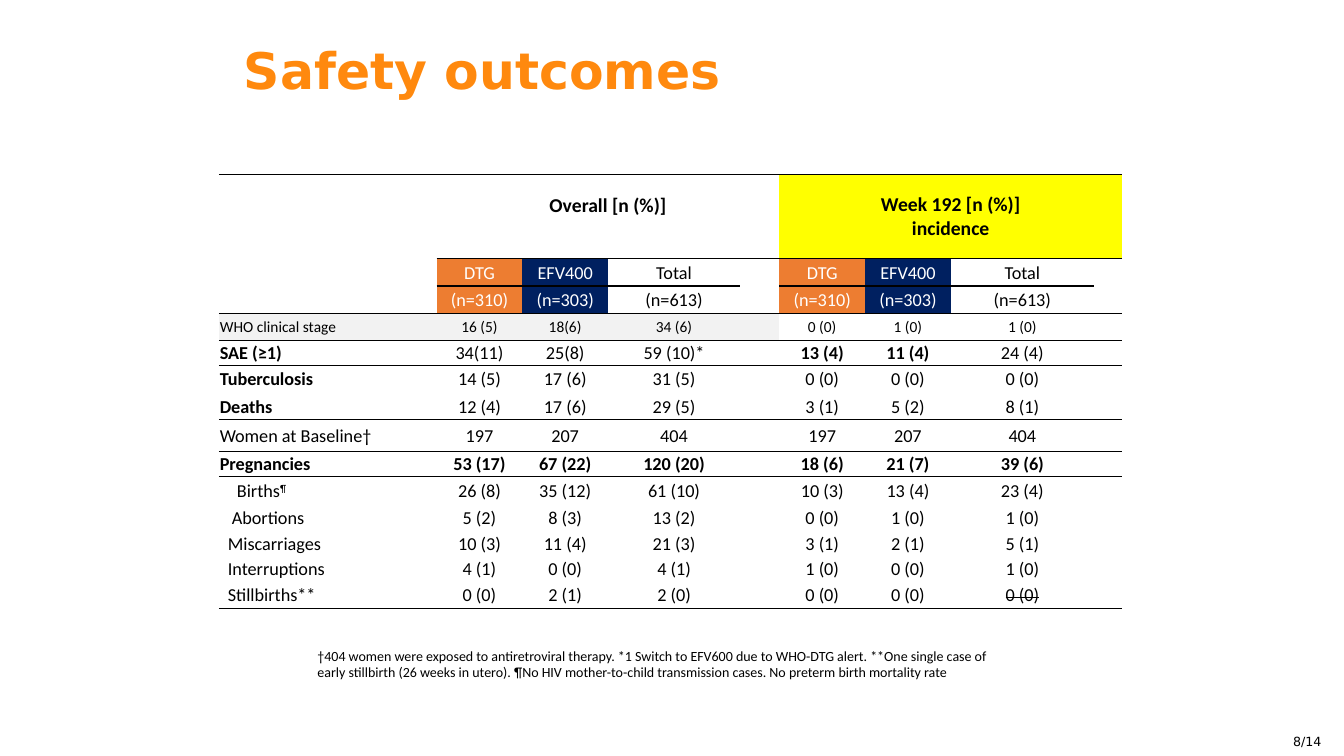
"""Build the safety outcomes slide with its table of trial results."""
from dataclasses import dataclass
from itertools import product

from lxml.etree import SubElement
from pptx import Presentation
from pptx.dml.color import RGBColor
from pptx.enum.text import MSO_ANCHOR as Anchor, PP_ALIGN as Align
from pptx.oxml.ns import qn
from pptx.slide import Slide
from pptx.table import Table, _Cell as Cell
from pptx.text.text import _Paragraph as Paragraph
from pptx.util import Inches, Pt


@dataclass(frozen=True)
class Theme:
    """Colours, fonts and type sizes of the slide."""
    black: str = "000000"
    white: str = "FFFFFF"
    title: str = "FF890E"
    dolutegravir: str = "ED7D31"
    efavirenz: str = "002060"
    highlight: str = "FFFF00"
    band: str = "F2F2F2"
    heading_font: str = "DejaVu Sans"
    body_font: str = "Calibri"
    title_size: int = 36
    group_size: int = 14
    body_size: int = 13
    small_size: int = 11
    note_size: int = 10
    number_size: int = 9
    empty_size: int = 8


THEME = Theme()


@dataclass(frozen=True)
class Style:
    """Look of one run of text."""
    size: int = THEME.body_size
    bold: bool = False
    colour: str = THEME.black
    font: str = THEME.body_font


@dataclass(frozen=True)
class TextBox:
    """One free text box."""
    text: str
    box: tuple[float, float, float, float]
    style: Style
    align: Align = Align.LEFT
    inset: bool = True
    spacing: float = 1.0


@dataclass(frozen=True)
class Outcome:
    """One body row: label, six results, and how they are set."""
    label: str
    overall: tuple[str, str, str]
    week: tuple[str, str, str]
    bold_columns: tuple[int, ...] = ()
    indent: float = 0.01
    size: int = THEME.body_size
    mark: str = ""
    struck_column: int = -1


@dataclass(frozen=True)
class Arm:
    """One heading column inside a group."""
    name: str
    count: str
    fill: str | None
    colour: str


TEXT_BOXES = (
    TextBox("Safety outcomes", (2.42, 0.46, 10.53, 0.76),
            Style(THEME.title_size, True, THEME.title, THEME.heading_font), inset=False, spacing=0.9),
    TextBox("8/14", (12.6, 7.23, 0.73, 0.25),
            Style(THEME.number_size, font=THEME.heading_font), Align.CENTER),
    TextBox("†404 women were exposed to antiretroviral therapy. *1 Switch to EFV600 due to WHO-DTG alert. "
            "**One single case of early stillbirth (26 weeks in utero). ¶No HIV mother-to-child transmission "
            "cases. No preterm birth mortality rate", (3.05, 6.37, 7.02, 0.44), Style(THEME.note_size)),
)
COLUMN_WIDTHS = (2.16, 0.85, 0.85, 1.31, 0.39, 0.85, 0.85, 1.42, 0.28)
ROW_HEIGHTS = (0.36, 0.36, 0.27, 0.27, 0.27, 0.25, 0.27, 0.27, 0.31, 0.25, 0.29, 0.25, 0.25, 0.25, 0.27)
FIRST_RULED_COLUMN = {0: 0, 2: 1, 4: 0, 5: 0, 8: 0, 9: 0, 15: 0}
GROUP_STARTS = (1, 5)
FIRST_BODY_ROW = 4
ARMS = (
    Arm("DTG", "(n=310)", THEME.dolutegravir, THEME.white),
    Arm("EFV400", "(n=303)", THEME.efavirenz, THEME.white),
    Arm("Total", "(n=613)", None, THEME.black),
)
OUTCOMES = (
    Outcome("WHO clinical stage", ("16 (5)", "18(6)", "34 (6)"), ("0 (0)", "1 (0)", "1 (0)"),
            size=THEME.small_size),
    Outcome("SAE (≥1)", ("34(11)", "25(8)", "59 (10)*"), ("13 (4)", "11 (4)", "24 (4)"), (0, 5, 6)),
    Outcome("Tuberculosis", ("14 (5)", "17 (6)", "31 (5)"), ("0 (0)", "0 (0)", "0 (0)"), (0,)),
    Outcome("Deaths", ("12 (4)", "17 (6)", "29 (5)"), ("3 (1)", "5 (2)", "8 (1)"), (0,)),
    Outcome("Women at Baseline†", ("197", "207", "404"), ("197", "207", "404")),
    Outcome("Pregnancies", ("53 (17)", "67 (22)", "120 (20)"), ("18 (6)", "21 (7)", "39 (6)"),
            tuple(range(9))),
    Outcome("Births", ("26 (8)", "35 (12)", "61 (10)"), ("10 (3)", "13 (4)", "23 (4)"),
            indent=0.18, mark="¶"),
    Outcome("Abortions", ("5 (2)", "8 (3)", "13 (2)"), ("0 (0)", "1 (0)", "1 (0)"), indent=0.13),
    Outcome("Miscarriages", ("10 (3)", "11 (4)", "21 (3)"), ("3 (1)", "2 (1)", "5 (1)"), indent=0.09),
    Outcome("Interruptions", ("4 (1)", "0 (0)", "4 (1)"), ("1 (0)", "0 (0)", "1 (0)"), indent=0.09),
    Outcome("Stillbirths**", ("0 (0)", "2 (1)", "2 (0)"), ("0 (0)", "0 (0)", "0 (0)"),
            indent=0.09, struck_column=7),
)


def add_run(paragraph: Paragraph, text: str, style: Style, **attributes: str) -> None:
    """Add a styled run with any further run attributes."""
    run = paragraph.add_run()
    run.text = text
    run.font.size = Pt(style.size)
    run.font.bold = style.bold
    run.font.name = style.font
    run.font.color.rgb = RGBColor.from_string(style.colour)
    for name, value in attributes.items():
        run.font._element.set(name, value)


def add_text_box(slide: Slide, item: TextBox) -> None:
    """Draw one text box."""
    frame = slide.shapes.add_textbox(*map(Inches, item.box)).text_frame
    frame.word_wrap = True
    if not item.inset:
        frame.margin_left = frame.margin_top = frame.margin_right = frame.margin_bottom = 0
    paragraph = frame.paragraphs[0]
    paragraph.alignment = item.align
    paragraph.line_spacing = item.spacing
    add_run(paragraph, item.text, item.style)


def write(cell: Cell, text: str, style: Style, align: Align = Align.CENTER, **attributes: str) -> None:
    """Write one line into an empty cell."""
    paragraph = cell.text_frame.paragraphs[0]
    paragraph.alignment = align
    add_run(paragraph, text, style, **attributes)


def paint(cell: Cell, colour: str) -> None:
    """Fill a cell with one colour."""
    cell.fill.solid()
    cell.fill.fore_color.rgb = RGBColor.from_string(colour)


def add_border(cell: Cell, side: str) -> None:
    """Rule one side of a cell."""
    line = SubElement(cell._tc.get_or_add_tcPr(), qn(f"a:{side}"), w=str(Pt(1)))
    SubElement(SubElement(line, qn("a:solidFill")), qn("a:srgbClr"), val=THEME.black)


def prepare_cells(table: Table) -> None:
    """Merge the heading cells, then set margins, rules and clear fills."""
    for start in GROUP_STARTS:
        table.cell(0, start).merge(table.cell(1, start + 3))
    for column in (0, 4, 8):
        table.cell(2, column).merge(table.cell(3, column))
    for row, column in product(range(len(ROW_HEIGHTS)), range(len(COLUMN_WIDTHS))):
        cell = table.cell(row, column)
        cell.margin_left = cell.margin_top = cell.margin_right = Inches(0.01)
        cell.margin_bottom = 0
        cell.vertical_anchor = Anchor.MIDDLE
        height = cell.span_height if cell.is_merge_origin else 1
        for side, boundary in (("lnT", row), ("lnB", row + height)):
            if column >= FIRST_RULED_COLUMN.get(boundary, len(COLUMN_WIDTHS)):
                add_border(cell, side)
        cell.fill.background()


def fill_headings(table: Table) -> None:
    """Write the two groups and their arms."""
    group_style = Style(THEME.group_size, True)
    overall, week = (table.cell(0, start) for start in GROUP_STARTS)
    write(overall, "Overall [n (%)]", group_style)
    overall.margin_bottom = Inches(0.23)
    write(week, "Week 192 [n (%)]", group_style)
    second_line = week.text_frame.add_paragraph()
    second_line.alignment = Align.CENTER
    add_run(second_line, "incidence", group_style)
    paint(week, THEME.highlight)
    for start, (offset, arm) in product(GROUP_STARTS, enumerate(ARMS)):
        for row, text in ((2, arm.name), (3, arm.count)):
            cell = table.cell(row, start + offset)
            write(cell, text, Style(colour=arm.colour))
            if arm.fill:
                paint(cell, arm.fill)


def fill_outcome(table: Table, row: int, outcome: Outcome) -> None:
    """Write one outcome row."""
    label = table.cell(row, 0)
    label.margin_left = Inches(outcome.indent)
    label_style = Style(outcome.size, 0 in outcome.bold_columns)
    write(label, outcome.label, label_style, Align.LEFT)
    if outcome.mark:
        add_run(label.text_frame.paragraphs[0], outcome.mark, label_style, baseline="30000")
    for start, results in zip(GROUP_STARTS, (outcome.overall, outcome.week)):
        for column, result in enumerate(results, start):
            attributes = {"strike": "sngStrike"} if column == outcome.struck_column else {}
            write(table.cell(row, column), result,
                  Style(outcome.size, column in outcome.bold_columns), **attributes)


def add_outcome_table(slide: Slide) -> None:
    """Draw the whole table."""
    frame = slide.shapes.add_table(len(ROW_HEIGHTS), len(COLUMN_WIDTHS), Inches(2.17), Inches(1.73),
                                   Inches(sum(COLUMN_WIDTHS)), Inches(sum(ROW_HEIGHTS)))
    table = frame.table
    table.first_row = table.horz_banding = False
    table._tbl.tblPr.find(qn("a:tableStyleId")).text = "{2D5ABB26-0587-4C30-8999-92F81FD0307C}"
    for column, width in zip(table.columns, COLUMN_WIDTHS):
        column.width = Inches(width)
    for row, height in zip(table.rows, ROW_HEIGHTS):
        row.height = Inches(height)
    prepare_cells(table)
    fill_headings(table)
    for row, outcome in enumerate(OUTCOMES, FIRST_BODY_ROW):
        fill_outcome(table, row, outcome)
    for column in range(5):
        paint(table.cell(FIRST_BODY_ROW, column), THEME.band)
    for cell in table.iter_cells():
        if not cell.text:
            paragraph = cell.text_frame.paragraphs[0]
            SubElement(paragraph._p, qn("a:endParaRPr"), sz=str(THEME.empty_size * 100))


def main() -> None:
    """Build and save the presentation."""
    presentation = Presentation()
    presentation.slide_width, presentation.slide_height = Inches(13.33), Inches(7.5)
    slide = presentation.slides.add_slide(presentation.slide_layouts[6])
    for item in TEXT_BOXES:
        add_text_box(slide, item)
    add_outcome_table(slide)
    presentation.save("out.pptx")


if __name__ == "__main__":
    main()
